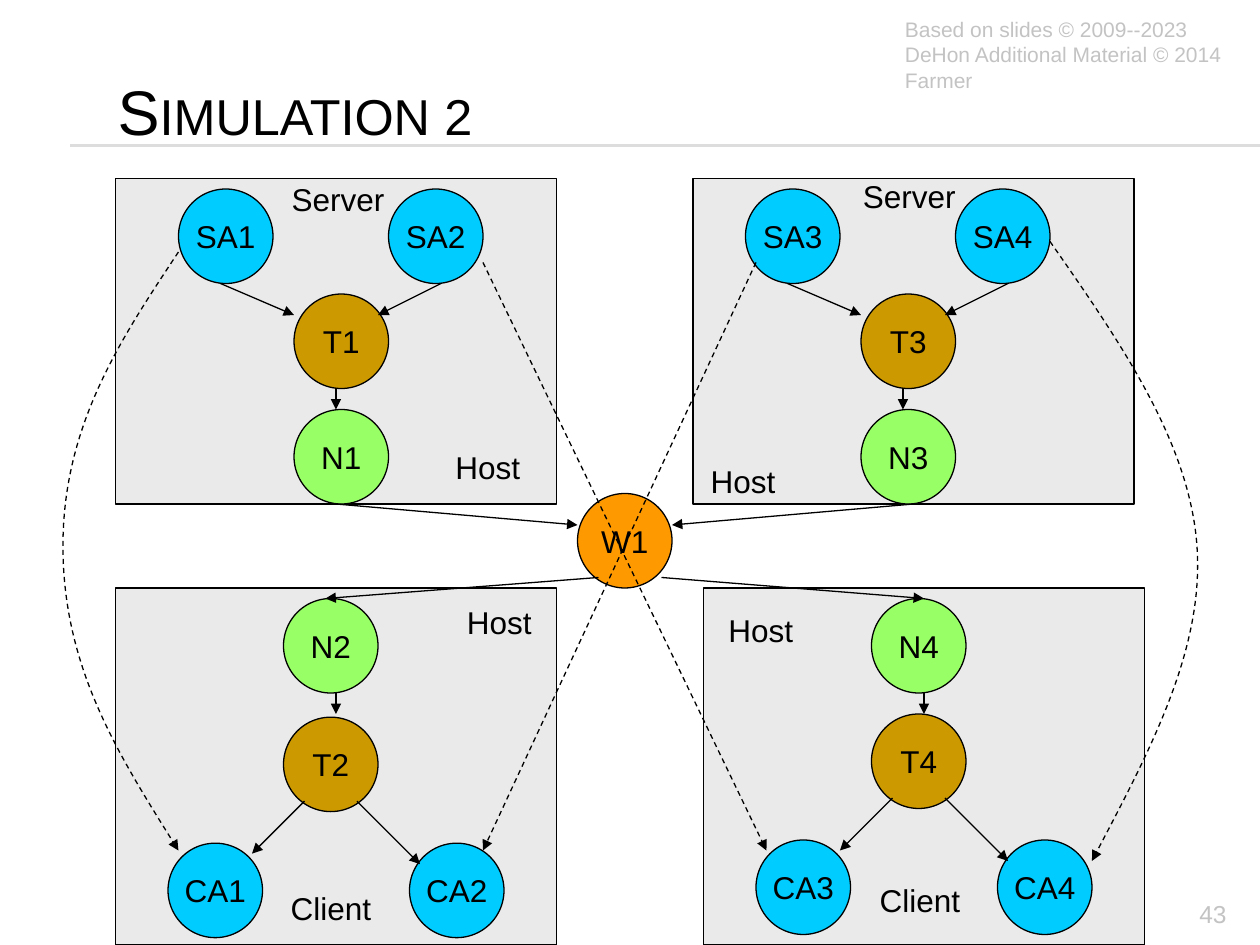
from typing import NamedTuple

from lxml.etree import SubElement
from pptx import Presentation
from pptx.dml.color import RGBColor
from pptx.enum.dml import MSO_LINE
from pptx.enum.shapes import MSO_CONNECTOR, MSO_SHAPE
from pptx.enum.text import MSO_ANCHOR, MSO_AUTO_SIZE, PP_ALIGN
from pptx.oxml.ns import qn
from pptx.util import Pt

EMU_PER_PX = 7620  # 120 px to the inch
NODE_SIZE = 90
BLACK, GREY, RULE, PANEL = "000000", "C3C3C3", "DDDDDD", "EAEAEA"
AGENT, TRANSPORT, NETWORK, WIRE = "00CCFF", "CC9900", "99FF66", "FF9900"


class Node(NamedTuple):
    name: str
    left: int
    top: int
    color: str


class Arrow(NamedTuple):
    x1: int
    y1: int
    x2: int
    y2: int
    dashed: bool = False


class Label(NamedTuple):
    text: str
    left: int
    top: int
    width: int
    height: int = 48
    size: int = 18
    color: str = BLACK
    align: PP_ALIGN = PP_ALIGN.LEFT
    wrap: bool = False


HOSTS = [(110, 170, 420, 310), (660, 170, 420, 310),
         (110, 560, 420, 340), (670, 560, 420, 340)]

NODES = [Node("W1", 550, 470, WIRE)]
ARROWS = []
for first, shift in ((1, 0), (3, 540)):
    NODES += [
        Node(f"SA{first}", 170 + shift, 180, AGENT),
        Node(f"SA{first + 1}", 370 + shift, 180, AGENT),
        Node(f"T{first}", 280 + shift, 280, TRANSPORT),
        Node(f"N{first}", 280 + shift, 390, NETWORK),
    ]
    ARROWS += [
        Arrow(210 + shift, 270, 280 + shift, 300),
        Arrow(420 + shift, 270, 360 + shift, 300),
        Arrow(320 + shift, 370, 320 + shift, 390),
    ]
for first, shift, drop in ((1, 0, 3), (3, 560, 0)):
    NODES += [
        Node(f"N{first + 1}", 270 + shift, 570, NETWORK),
        Node(f"T{first + 1}", 270 + shift, 680 + drop, TRANSPORT),
        Node(f"CA{first}", 160 + shift, 800 + drop, AGENT),
        Node(f"CA{first + 1}", 390 + shift, 800 + drop, AGENT),
    ]
    ARROWS += [
        Arrow(320 + shift, 660, 320 + shift, 680),
        Arrow(290 + shift, 760 + drop, 240 + shift, 810 + drop),
        Arrow(340 + shift, 760 + drop, 400 + shift, 820 + drop),
    ]
ARROWS += [
    Arrow(320, 480, 550, 500),
    Arrow(570, 550, 310, 570),
    Arrow(870, 480, 640, 500),
    Arrow(630, 550, 880, 570),
    Arrow(460, 250, 730, 810, dashed=True),
    Arrow(720, 250, 460, 810, dashed=True),
]

CURVES = [
    [(170, 240), (115, 323), (60, 405), (60, 520),
     (60, 635), (115, 722), (170, 810)],
    [(1000, 230), (1067, 326), (1133, 421), (1140, 520),
     (1147, 618), (1093, 719), (1040, 820)],
]

LABELS = [
    Label("Based on slides © 2009--2023 DeHon Additional Material © 2014 Farmer",
          850, 10, 330, 38, 12, GREY, wrap=True),
    Label("43", 1080, 850, 100, 32, 14, GREY, PP_ALIGN.RIGHT, True),
    Label("Host", 682, 576, 86),
    Label("Host", 665, 434, 86),
    Label("Host", 422, 421, 86),
    Label("Host", 433, 568, 86),
    Label("Server", 266, 166, 114),
    Label("Server", 810, 163, 114),
    Label("Client", 826, 833, 102),
    Label("Client", 265, 841, 102),
]


def px(*lengths: int) -> list[int]:
    return [length * EMU_PER_PX for length in lengths]


def rgb(color: str) -> RGBColor:
    return RGBColor.from_string(color)


def write(shape, text: str, size: int, color: str, align, **frame_format):
    frame = shape.text_frame
    for name, value in frame_format.items():
        setattr(frame, name, value)
    para = frame.paragraphs[0]
    para.alignment = align
    span = para.add_run()
    span.text = text
    for name, value in {"name": "Arial", "size": Pt(size)}.items():
        setattr(span.font, name, value)
    span.font.color.rgb = rgb(color)
    return span


def style_line(shape, color: str = BLACK, dashed: bool = False, arrow: bool = False):
    shape.line.color.rgb = rgb(color)
    shape.line.width = Pt(0.75)
    if dashed:
        shape.line.dash_style = MSO_LINE.DASH
    if arrow:
        outline = shape._element.spPr.find(qn("a:ln"))
        SubElement(outline, qn("a:tailEnd"), type="triangle")


def draw_shape(page, kind, box: tuple, color: str):
    shape = page.shapes.add_shape(kind, *px(*box))
    shape.shadow.inherit = False
    shape.fill.solid()
    shape.fill.fore_color.rgb = rgb(color)
    style_line(shape)
    return shape


def draw_node(page, node: Node):
    circle = draw_shape(page, MSO_SHAPE.OVAL,
                        (node.left, node.top, NODE_SIZE, NODE_SIZE), node.color)
    write(circle, node.name, 18, BLACK, PP_ALIGN.CENTER,
          word_wrap=False, vertical_anchor=MSO_ANCHOR.MIDDLE)


def draw_line(page, line: Arrow, color: str = BLACK, arrow: bool = True):
    connector = page.shapes.add_connector(MSO_CONNECTOR.STRAIGHT, *px(*line[:4]))
    style_line(connector, color, line.dashed, arrow)
    SubElement(connector._element.spPr, qn("a:effectLst"))


def draw_curve(page, points: list):
    """Draw a dashed arrow; after the start, each three points are one Bezier."""
    builder = page.shapes.build_freeform(*points[0], scale=EMU_PER_PX)
    builder.add_line_segments(points[1:], close=False)
    curve = builder.convert_to_shape()
    curve.shadow.inherit = False
    curve.fill.background()
    style_line(curve, dashed=True, arrow=True)
    outline = next(curve._element.iter(qn("a:path")))
    segments = outline.findall(qn("a:lnTo"))
    for start in range(0, len(segments), 3):
        bezier = SubElement(outline, qn("a:cubicBezTo"))
        for segment in segments[start:start + 3]:
            bezier.append(segment[0])
            outline.remove(segment)


def draw_label(page, label: Label):
    box = page.shapes.add_textbox(
        *px(label.left, label.top, label.width, label.height))
    write(box, label.text, label.size, label.color, label.align,
          word_wrap=label.wrap)


def place_title(page, text: str):
    title = page.shapes.title
    bounds = zip(("left", "top", "width", "height"), px(100, 30, 1020, 150))
    for name, value in bounds:
        setattr(title, name, value)
    span = write(title, text, 36, BLACK, PP_ALIGN.LEFT, word_wrap=True,
                 vertical_anchor=MSO_ANCHOR.MIDDLE, auto_size=MSO_AUTO_SIZE.NONE)
    span.font._element.set("cap", "small")


def main():
    deck = Presentation()
    deck.slide_width, deck.slide_height = px(1200, 900)
    page = deck.slides.add_slide(deck.slide_layouts[5])
    place_title(page, "Simulation 2")
    for y in (138, 139):
        draw_line(page, Arrow(67, y, 1200, y), RULE, arrow=False)
    for host in HOSTS:
        draw_shape(page, MSO_SHAPE.RECTANGLE, host, PANEL)
    for draw, items in ((draw_node, NODES), (draw_line, ARROWS),
                        (draw_curve, CURVES), (draw_label, LABELS)):
        for item in items:
            draw(page, item)
    deck.save("out.pptx")


if __name__ == "__main__":
    main()
